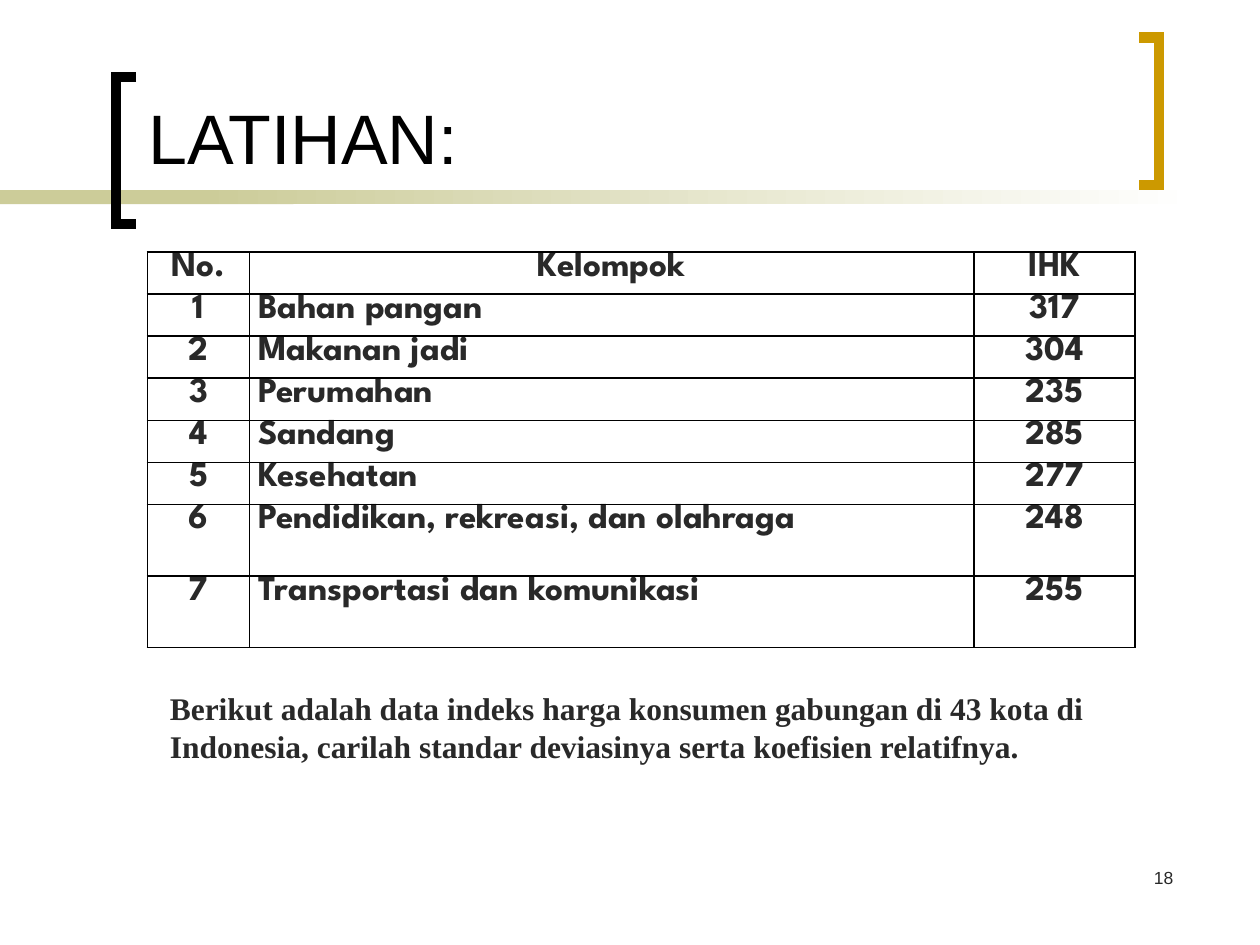
from lxml.etree import SubElement
from pptx import Presentation
from pptx.dml.color import RGBColor
from pptx.enum.shapes import MSO_SHAPE
from pptx.enum.text import MSO_ANCHOR, PP_ALIGN
from pptx.oxml.ns import qn
from pptx.util import Inches, Pt

BLACK = RGBColor(0x00, 0x00, 0x00)
WHITE = RGBColor(0xFF, 0xFF, 0xFF)
INK = RGBColor(0x29, 0x29, 0x29)
SAGE = RGBColor(0xCC, 0xCC, 0x99)
GOLD = RGBColor(0xCC, 0x99, 0x00)

TITLE = "LATIHAN:"
QUESTION = ("Berikut adalah data indeks harga konsumen gabungan di 43 kota di "
            "Indonesia, carilah standar deviasinya serta koefisien relatifnya.")
PAGE = "18"
HEADER = ("No.", "Kelompok", "IHK")
GROUPS = [
    ("Bahan pangan", 317),
    ("Makanan jadi", 304),
    ("Perumahan", 235),
    ("Sandang", 285),
    ("Kesehatan", 277),
    ("Pendidikan, rekreasi, dan olahraga", 248),
    ("Transportasi dan komunikasi", 255),
]
COL_WIDTHS = (0.81, 5.75, 1.28)
ROW_UNITS = (1, 1, 1, 1, 1, 1, 2, 2)
TABLE_HEIGHT = 2.84


def write(tf, text, size, font, color=INK, bold=False, align=PP_ALIGN.LEFT):
    p = tf.paragraphs[0]
    p.alignment = align
    r = p.add_run()
    r.text = text
    r.font.size, r.font.name, r.font.bold = Pt(size), font, bold
    r.font.color.rgb = color


def add_text(s, box, text, anchor=MSO_ANCHOR.TOP, **fmt):
    tf = s.shapes.add_textbox(*map(Inches, box)).text_frame
    tf.word_wrap = True
    tf.vertical_anchor = anchor
    write(tf, text, **fmt)


def add_band(s, left, width, end_color=None):
    """Solid strip, or one that fades to end_color."""
    sp = s.shapes.add_shape(MSO_SHAPE.RECTANGLE, Inches(left), Inches(1.51),
                            Inches(width), Inches(0.11))
    sp.shadow.inherit = False
    sp.line.fill.background()
    if end_color is None:
        sp.fill.solid()
        sp.fill.fore_color.rgb = SAGE
    else:
        sp.fill.gradient()
        sp.fill.gradient_angle = 0
        for stop, color in zip(sp.fill.gradient_stops, (SAGE, end_color)):
            stop.color.rgb = color


def add_bracket(s, tip_x, spine_x, top, color):
    bottom = top + 1.17
    points = [(Inches(x), Inches(y)) for x, y in (
        (tip_x, top), (spine_x, top), (spine_x, bottom), (tip_x, bottom))]
    builder = s.shapes.build_freeform(*points[0])
    builder.add_line_segments(points[1:], close=False)
    sp = builder.convert_to_shape()
    sp.shadow.inherit = False
    sp.fill.background()
    sp.line.color.rgb = color
    sp.line.width = Pt(6)
    SubElement(sp.line._get_or_add_ln(), qn("a:miter"), lim="800000")


def add_borders(cell):
    tc_pr = cell._tc.get_or_add_tcPr()
    for i, side in enumerate(("lnL", "lnR", "lnT", "lnB")):
        ln = SubElement(tc_pr, qn(f"a:{side}"), w=str(Pt(1)))
        fill = SubElement(ln, qn("a:solidFill"))
        SubElement(fill, qn("a:srgbClr"), val=str(BLACK))
        tc_pr.insert(i, ln)


def add_index_table(s):
    rows = [HEADER] + [(i, *group) for i, group in enumerate(GROUPS, 1)]
    table = s.shapes.add_table(
        len(rows), len(HEADER), Inches(1.17), Inches(2),
        Inches(sum(COL_WIDTHS)), Inches(TABLE_HEIGHT)).table
    for col, width in zip(table.columns, COL_WIDTHS):
        col.width = Inches(width)
    for row, units in zip(table.rows, ROW_UNITS):
        row.height = Inches(TABLE_HEIGHT * units / sum(ROW_UNITS))
    for i, values in enumerate(rows):
        for j, value in enumerate(values):
            cell = table.cell(i, j)
            cell.fill.background()
            cell.margin_left = cell.margin_right = Inches(0.07)
            cell.margin_top = cell.margin_bottom = 0
            is_name = i > 0 and j == 1
            write(cell.text_frame, str(value), size=20, font="League Spartan",
                  bold=True, align=PP_ALIGN.LEFT if is_name else PP_ALIGN.CENTER)
            add_borders(cell)


def main():
    prs = Presentation()
    prs.slide_width, prs.slide_height = Inches(10), Inches(7.5)
    s = prs.slides.add_slide(prs.slide_layouts[6])
    add_band(s, 0, 2.33)
    add_band(s, 1.58, 7.92, end_color=WHITE)
    add_bracket(s, 1.08, 0.92, 0.61, BLACK)
    add_bracket(s, 9.04, 9.2, 0.3, GOLD)
    add_text(s, (1.08, 0.83, 6.9, 0.64), TITLE, anchor=MSO_ANCHOR.BOTTOM,
             size=40, font="Arial", color=BLACK)
    add_text(s, (7.33, 6.83, 2.08, 0.5), PAGE, size=10, font="Arial",
             align=PP_ALIGN.RIGHT)
    add_index_table(s)
    add_text(s, (1.25, 5.42, 7.83, 1.01), QUESTION, size=18,
             font="Times New Roman", bold=True)
    prs.save("out.pptx")


if __name__ == "__main__":
    main()
